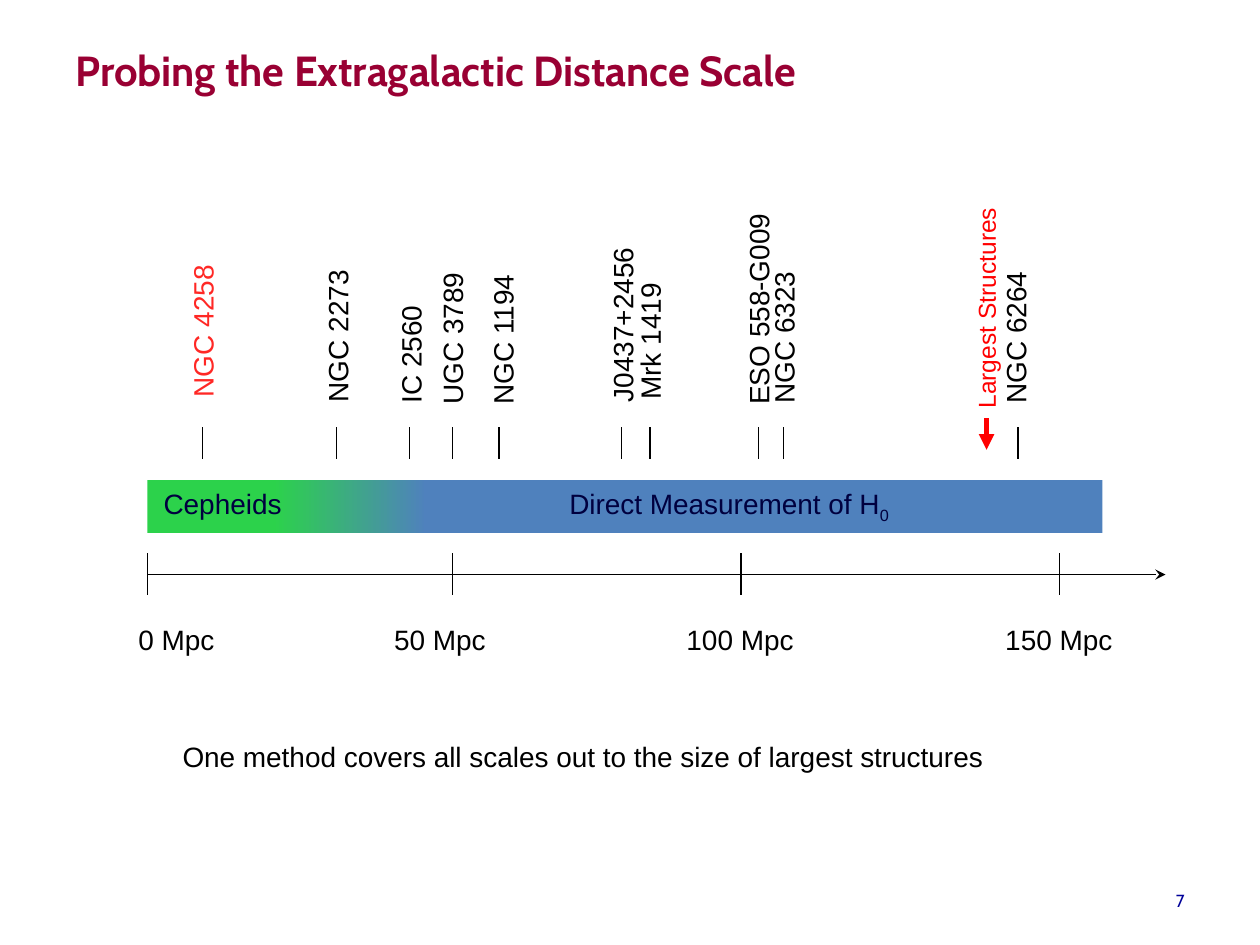
from lxml import etree
from pptx import Presentation
from pptx.dml.color import RGBColor
from pptx.enum.shapes import MSO_CONNECTOR as Connector, MSO_SHAPE as Shape
from pptx.enum.text import MSO_ANCHOR as Anchor, MSO_AUTO_SIZE as AutoSize, PP_ALIGN as Align
from pptx.oxml.ns import qn
from pptx.util import Inches, Pt

BLACK = RGBColor(0x00, 0x00, 0x00)
RED = RGBColor(0xFF, 0x00, 0x00)
LIGHT_RED = RGBColor(0xFF, 0x28, 0x25)
MAROON = RGBColor(0x99, 0x00, 0x33)
BLUE = RGBColor(0x00, 0x00, 0x99)
NAVY = RGBColor(0x00, 0x00, 0x3F)
GREEN = RGBColor(0x2C, 0xD2, 0x4B)
STEEL = RGBColor(0x4F, 0x81, 0xBD)

LABEL_HEIGHT = 0.37
BAR_TOP = 3.81
AXIS_LEFT, AXIS_RIGHT, AXIS_Y = 1.17, 9.25, 4.56

# name, tick x, label centre x, label bottom, label width, colour, wrap
GALAXIES = [
    ("NGC 4258", 1.61, 1.61, 3.25, 1.26, LIGHT_RED, False),
    ("NGC 2273", 2.67, 2.68, 3.29, 1.26, BLACK, False),
    ("IC 2560", 3.25, 3.26, 3.30, 0.99, BLACK, False),
    ("UGC 3789", 3.59, 3.59, 3.31, 1.38, BLACK, True),
    ("NGC 1194", 3.96, 3.99, 3.31, 1.38, BLACK, True),
    ("J0437+2456", 4.93, 4.94, 3.29, 1.44, BLACK, False),
    ("Mrk 1419", 5.16, 5.16, 3.27, 1.14, BLACK, False),
    ("ESO 558-G009", 6.02, 6.02, 3.31, 1.74, BLACK, False),
    ("NGC 6323", 6.22, 6.22, 3.30, 1.26, BLACK, False),
    ("NGC 6264", 8.08, 8.06, 3.30, 1.26, BLACK, False),
]

# label, tick x, label left, label width
DISTANCES = [
    ("0 Mpc", 1.17, 1.00, 0.81),
    ("50 Mpc", 3.59, 3.03, 0.94),
    ("100 Mpc", 5.88, 5.35, 1.06),
    ("150 Mpc", 8.41, 7.88, 1.06),
]


class SlideBuilder:
    def __init__(self, slide, font="Arial", heading_font="Cabin", size=16):
        self.slide = slide
        self.font = font
        self.heading_font = heading_font
        self.size = size

    def text(self, words, left, top, width, height=LABEL_HEIGHT, color=BLACK,
             size=None, font=None, bold=False, wrap=False, grow=True,
             anchor=Anchor.TOP, align=Align.LEFT, subscript=""):
        box = self.slide.shapes.add_textbox(
            Inches(left), Inches(top), Inches(width), Inches(height))
        frame = box.text_frame
        frame.word_wrap = wrap
        frame.auto_size = AutoSize.SHAPE_TO_FIT_TEXT if grow else AutoSize.NONE
        frame.vertical_anchor = anchor
        paragraph = frame.paragraphs[0]
        paragraph.alignment = align
        for part in filter(None, (words, subscript)):
            run = paragraph.add_run()
            run.text = part
            run.font.name = font or self.font
            run.font.size = Pt(size or self.size)
            run.font.bold = bold
            run.font.color.rgb = color
        if subscript:
            run.font._element.set("baseline", "-25000")
        return box

    def heading_text(self, words, left, top, width, height, **style):
        return self.text(words, left, top, width, height, font=self.heading_font,
                         wrap=True, grow=False, **style)

    def upright_text(self, words, center, bottom, length, height=LABEL_HEIGHT, **style):
        """Add text that reads upwards from the given bottom edge."""
        box = self.text(words, center - length / 2, bottom - length / 2 - height / 2,
                        length, height, **style)
        box.rotation = 270
        return box

    def bar(self, left, width, color, end_color=None):
        """Add a bar segment, blending to end_color from left to right if given."""
        shape = self.slide.shapes.add_shape(
            Shape.RECTANGLE, Inches(left), Inches(BAR_TOP), Inches(width), Inches(0.42))
        shape.shadow.inherit = False
        shape.line.fill.background()
        if end_color is None:
            shape.fill.solid()
            shape.fill.fore_color.rgb = color
            return
        shape.fill.gradient()
        shape.fill.gradient_angle = 0
        for stop, stop_color, position in zip(
                shape.fill.gradient_stops, (color, end_color), (0, 1)):
            stop.color.rgb = stop_color
            stop.position = position

    def line(self, x1, y1, x2, y2, color=BLACK, width=0.75, arrow=None):
        connector = self.slide.shapes.add_connector(
            Connector.STRAIGHT, Inches(x1), Inches(y1), Inches(x2), Inches(y2))
        connector.line.color.rgb = color
        connector.line.width = Pt(width)
        if arrow:
            etree.SubElement(connector.line._get_or_add_ln(), qn("a:tailEnd"), type=arrow)
        etree.SubElement(connector._element.spPr, qn("a:effectLst"))


def main():
    presentation = Presentation()
    presentation.slide_width = Inches(10)
    presentation.slide_height = Inches(7.5)
    builder = SlideBuilder(presentation.slides.add_slide(presentation.slide_layouts[6]))

    builder.heading_text("Probing the Extragalactic Distance Scale", 0.5, 0.3, 9, 1.25,
                         color=MAROON, size=24, bold=True)
    builder.heading_text("7", 9, 6.95, 0.5, 0.4, color=BLUE, size=10,
                         anchor=Anchor.MIDDLE, align=Align.RIGHT)

    builder.bar(AXIS_LEFT, 1.67, GREEN)
    builder.bar(3.25, 5.5, STEEL)
    builder.bar(2.17, 1.22, GREEN, STEEL)
    builder.text("Cepheids", 1.2, BAR_TOP, 1.15, color=NAVY)
    builder.text("Direct Measurement of H", 4.42, BAR_TOP, 2.78, color=NAVY, subscript="0")

    builder.line(AXIS_LEFT, AXIS_Y, AXIS_RIGHT, AXIS_Y, arrow="stealth")
    for label, x, left, width in DISTANCES:
        builder.line(x, 4.39, x, 4.72)
        builder.text(label, left, 4.89, width)

    for name, x, center, bottom, length, color, wrap in GALAXIES:
        builder.line(x, 3.39, x, 3.64)
        builder.upright_text(name, center, bottom, length, color=color, wrap=wrap)

    builder.line(7.83, 3.32, 7.83, 3.57, color=RED, width=3, arrow="triangle")
    builder.upright_text("Largest Structures", 7.83, 3.34, 1.99, 0.34,
                         color=RED, size=14, wrap=True)

    summary = builder.text("One method covers all scales out to the size of largest structures",
                           1.35, 5.82, 7.75, wrap=True)
    properties = summary.text_frame.paragraphs[0]._p.get_or_add_pPr()
    properties.set("marL", str(Inches(0.19)))
    properties.set("indent", str(-Inches(0.19)))

    presentation.save("out.pptx")


if __name__ == "__main__":
    main()
